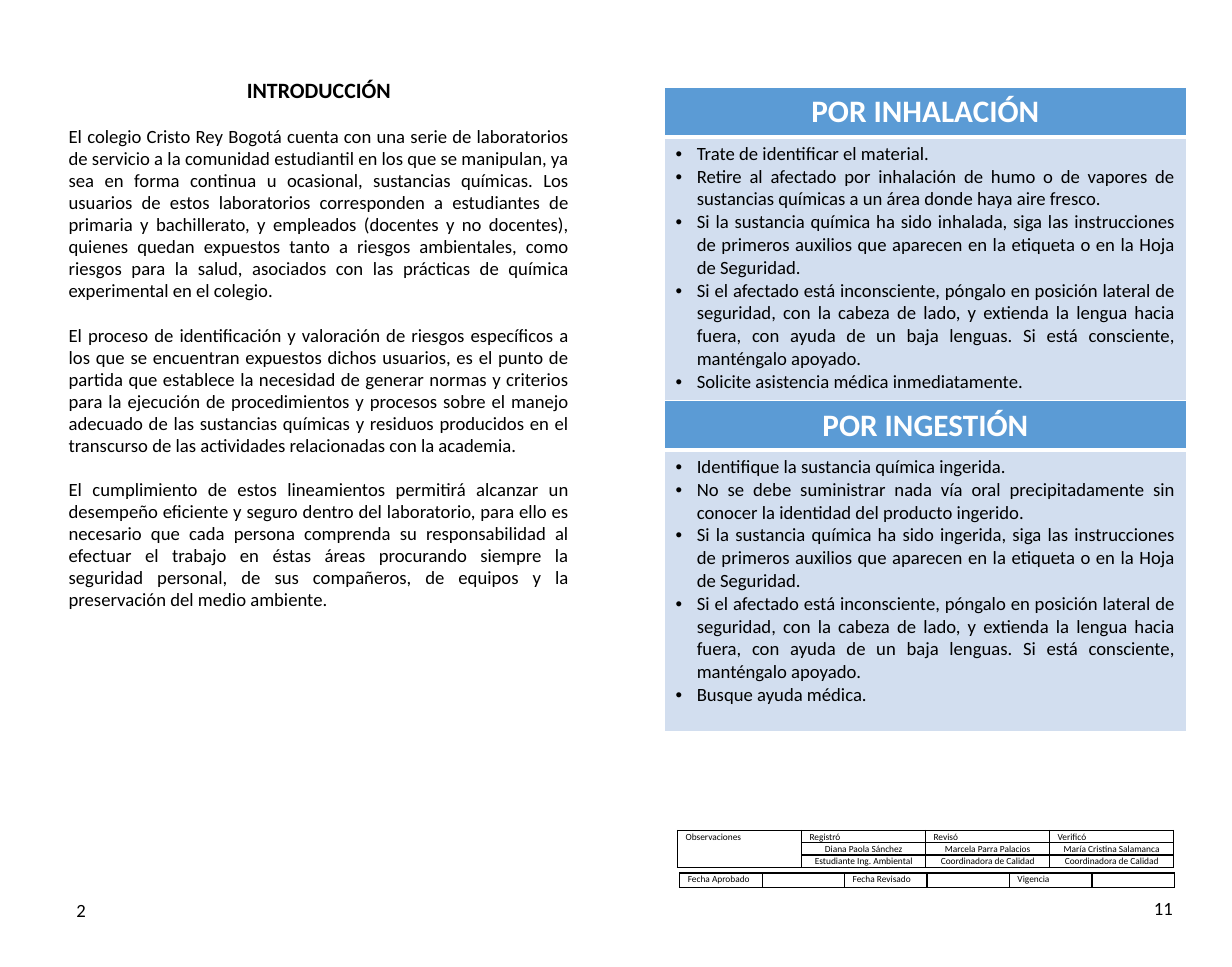
from dataclasses import dataclass

from lxml import etree
from pptx import Presentation
from pptx import util as u
from pptx.dml.color import RGBColor
from pptx.enum import text
from pptx.oxml import ns

INTRO_TITLE = "INTRODUCCIÓN"
INTRO = [
    "El colegio Cristo Rey Bogotá cuenta con una serie de laboratorios de servicio a la comunidad estudiantil en los que se manipulan, ya sea en forma continua u ocasional, sustancias químicas. Los usuarios de estos laboratorios corresponden a estudiantes de primaria y bachillerato, y empleados (docentes y no docentes), quienes quedan expuestos tanto a riesgos ambientales, como riesgos para la salud, asociados con las prácticas de química experimental en el colegio.",
    "El proceso de identificación y valoración de riesgos específicos a los que se encuentran expuestos dichos usuarios, es el punto de partida que establece la necesidad de generar normas y criterios para la ejecución de procedimientos y procesos sobre el manejo adecuado de las sustancias químicas y residuos producidos en el transcurso de las actividades relacionadas con la academia.",
    "El cumplimiento de estos lineamientos permitirá alcanzar un desempeño eficiente y seguro dentro del laboratorio, para ello es necesario que cada persona comprenda su responsabilidad al efectuar el trabajo en éstas áreas procurando siempre la seguridad personal, de sus compañeros, de equipos y la preservación del medio ambiente.",
]
UNCONSCIOUS = "Si el afectado está inconsciente, póngalo en posición lateral de seguridad, con la cabeza de lado, y extienda la lengua hacia fuera, con ayuda de un baja lenguas. Si está consciente, manténgalo apoyado."
FIRST_AID = "Si la sustancia química ha sido {}, siga las instrucciones de primeros auxilios que aparecen en la etiqueta o en la Hoja de Seguridad."
EXPOSURES = [
    ("POR INHALACIÓN", [
        "Trate de identificar el material.",
        "Retire al afectado por inhalación de humo o de vapores de sustancias químicas a un área donde haya aire fresco.",
        FIRST_AID.format("inhalada"),
        UNCONSCIOUS,
        "Solicite asistencia médica inmediatamente.",
    ]),
    ("POR INGESTIÓN", [
        "Identifique la sustancia química ingerida.",
        "No se debe suministrar nada vía oral precipitadamente sin conocer la identidad del producto ingerido.",
        FIRST_AID.format("ingerida"),
        UNCONSCIOUS,
        "Busque ayuda médica.",
    ]),
]
SIGNATURES = [
    ("Observaciones", "Registró", "Revisó", "Verificó"),
    ("", "Diana Paola Sánchez", "Marcela Parra Palacios", "María Cristina Salamanca"),
    ("", "Estudiante Ing. Ambiental", "Coordinadora de Calidad", "Coordinadora de Calidad"),
]
DATES = [("Fecha Aprobado", "", "Fecha Revisado", "", "Vigencia", "")]
PAGE_NUMBERS = [("2", 1.3, 20.22), ("11", 25.8, 20.17)]


@dataclass(frozen=True)
class Theme:
    font: str = "Calibri"
    ink: str = "000000"
    white: str = "FFFFFF"
    header: str = "5B9BD5"
    panel: str = "D2DEEF"
    heading: int = 20
    title: int = 14
    body: int = 12
    small: int = 6


THEME = Theme()
ALIGN = text.PP_ALIGN


def format_para(para, size, align, color=THEME.ink, bold=False):
    para.alignment = align
    for span in para.runs:
        span.font.name = THEME.font
        span.font.size = u.Pt(size)
        span.font.bold = bold
        span.font.color.rgb = RGBColor.from_string(color)


def set_bullet(para, char=None):
    props = para._p.get_or_add_pPr()
    indent = u.Cm(0.48) if char else 0
    props.set("marL", str(indent))
    props.set("indent", str(-indent))
    if char:
        etree.SubElement(props, ns.qn("a:buFont"), typeface="Arial")
        etree.SubElement(props, ns.qn("a:buChar"), char=char)
    else:
        etree.SubElement(props, ns.qn("a:buNone"))


def set_borders(cell, color, top=1, bottom=1):
    props = cell._tc.get_or_add_tcPr()
    for index, (side, width) in enumerate((("L", 1), ("R", 1), ("T", top), ("B", bottom))):
        line = etree.Element(ns.qn(f"a:ln{side}"), w=str(u.Pt(width)))
        fill = etree.SubElement(line, ns.qn("a:solidFill"))
        etree.SubElement(fill, ns.qn("a:srgbClr"), val=color)
        props.insert(index, line)


def add_grid(page, left, top, width, heights, columns):
    frame = page.shapes.add_table(len(heights), columns, u.Cm(left), u.Cm(top),
                                  u.Cm(width), u.Cm(sum(heights)))
    table = frame.table
    table.first_row = table.horz_banding = False
    for row, height in zip(table.rows, heights):
        row.height = u.Cm(height)
    for column in table.columns:
        column.width = u.Cm(width / columns)
    return table


def fill_cell(cell, color):
    cell.fill.solid()
    cell.fill.fore_color.rgb = RGBColor.from_string(color)


def add_exposure(page, top, heading, steps):
    table = add_grid(page, 15.04, top, 11.82, (1.12, 6.38), 1)
    head, panel = table.cell(0, 0), table.cell(1, 0)
    fill_cell(head, THEME.header)
    fill_cell(panel, THEME.panel)
    set_borders(head, THEME.white, bottom=3)
    set_borders(panel, THEME.white, top=3)
    head.text_frame.text = heading
    format_para(head.text_frame.paragraphs[0], THEME.heading, ALIGN.CENTER, THEME.white, True)
    panel.text_frame.text = "\n".join(steps)
    for para in panel.text_frame.paragraphs:
        set_bullet(para, "•")
        format_para(para, THEME.body, ALIGN.JUSTIFY)


def add_form(page, left, top, width, height, rows):
    table = add_grid(page, left, top, width, [height] * len(rows), len(rows[0]))
    for r, row in enumerate(rows):
        for c, label in enumerate(row):
            cell = table.cell(r, c)
            cell.fill.background()
            set_borders(cell, THEME.ink)
            cell.margin_left = cell.margin_right = u.Cm(0.18)
            cell.margin_top = cell.margin_bottom = 0
            cell.text_frame.text = label
            para = cell.text_frame.paragraphs[0]
            para.line_spacing = 1.07
            format_para(para, THEME.small, ALIGN.CENTER if r else ALIGN.LEFT)
            if not label:
                etree.SubElement(para._p, ns.qn("a:endParaRPr"), sz=str(THEME.small * 100))
    return table


def place(box, left, top, width, height):
    box.left, box.top, box.width, box.height = map(u.Cm, (left, top, width, height))
    box.text_frame.word_wrap = True
    box.text_frame.auto_size = text.MSO_AUTO_SIZE.NONE
    box.text_frame.vertical_anchor = text.MSO_ANCHOR.TOP


def add_intro(page):
    title, body = page.placeholders
    place(title, 1.3, 1.6, 11.84, 1)
    title.text_frame.text = INTRO_TITLE
    format_para(title.text_frame.paragraphs[0], THEME.title, ALIGN.CENTER, bold=True)
    place(body, 1.3, 2.73, 11.84, 11.45)
    body.text_frame.text = "\n".join(INTRO)
    for index, para in enumerate(body.text_frame.paragraphs):
        set_bullet(para)
        para.line_spacing = 0.98
        para.space_before = u.Pt(14.4 if index else 0)
        format_para(para, THEME.body, ALIGN.JUSTIFY)


def main():
    deck = Presentation()
    deck.slide_width, deck.slide_height = u.Cm(27.89), u.Cm(21.89)
    page = deck.slides.add_slide(deck.slide_layouts[1])
    add_intro(page)
    for index, (heading, steps) in enumerate(EXPOSURES):
        add_exposure(page, 1.98 + index * 7.09, heading, steps)
    signatures = add_form(page, 15.34, 18.8, 11.23, 0.27, SIGNATURES)
    signatures.cell(0, 0).merge(signatures.cell(2, 0))
    add_form(page, 15.39, 19.76, 11.2, 0.33, DATES)
    for number, left, top in PAGE_NUMBERS:
        box = page.shapes.add_textbox(0, 0, 0, 0)
        place(box, left, top, 1.07, 0.76)
        box.text_frame.text = number
        format_para(box.text_frame.paragraphs[0], THEME.body, ALIGN.CENTER)
    deck.save("out.pptx")


if __name__ == "__main__":
    main()
